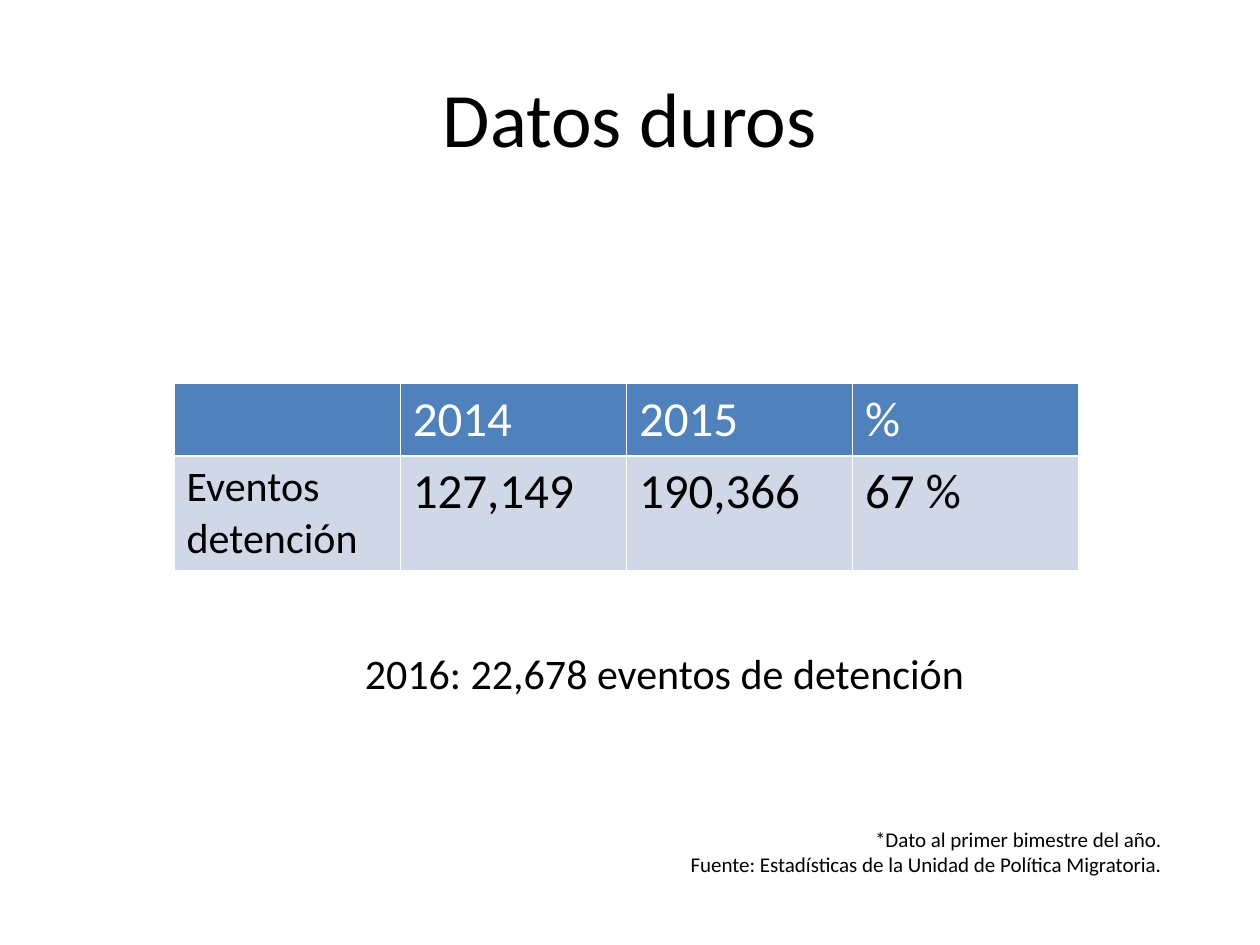
from lxml import etree
from pptx import Presentation
from pptx import util as u
from pptx.dml.color import RGBColor
from pptx.enum import text as t
from pptx.oxml import ns

BLACK = RGBColor(0, 0, 0)
WHITE = RGBColor(255, 255, 255)
BLUE = RGBColor(0x4F, 0x81, 0xBD)
PALE = RGBColor(0xD0, 0xD8, 0xE8)
FONT = "Calibri"

TITLE = "Datos duros"
ROWS = [
    ["", "2014", "2015", "%"],
    ["Eventos\ndetención", "127,149", "190,366", "67 %"],
]
STYLES = [(41, BLUE, WHITE), (65.5, PALE, BLACK)]
COL = 129.25
NOTES = [
    ("*Dato al primer bimestre del año.\n"
     "Fuente: Estadísticas de la Unidad de Política Migratoria.",
     (348.5, 468.75, 322.5, 36), 12, t.PP_ALIGN.RIGHT, True),
    ("2016: 22,678 eventos de detención",
     (201.5, 366.5, 365, 36), 24, t.PP_ALIGN.LEFT, False),
]


def write(frame, words, size=28, color=BLACK, align=t.PP_ALIGN.LEFT):
    frame.text = words
    for para in frame.paragraphs:
        para.alignment = align
        font = para.font
        font.name, font.size, font.bold = FONT, u.Pt(size), False
        font.color.rgb = color


def edge(cell, color):
    props = cell._tc.get_or_add_tcPr()
    for spot, side in enumerate(("lnL", "lnR", "lnT", "lnB")):
        line = etree.Element(ns.qn("a:" + side), w=str(u.Pt(1)))
        fill = etree.SubElement(line, ns.qn("a:solidFill"))
        etree.SubElement(fill, ns.qn("a:srgbClr"), val=str(color))
        props.insert(spot, line)


deck = Presentation()
deck.slide_width, deck.slide_height = u.Pt(720), u.Pt(540)
slide = deck.slides.add_slide(deck.slide_layouts[5])

title = slide.shapes.title
title.left, title.top, title.width, title.height = map(u.Pt, (36, 21.6, 648, 90))
title.text_frame.vertical_anchor = t.MSO_ANCHOR.MIDDLE
write(title.text_frame, TITLE, size=44, align=t.PP_ALIGN.CENTER)

high = sum(style[0] for style in STYLES)
box = map(u.Pt, (99.5, 219, COL * len(ROWS[0]), high))
table = slide.shapes.add_table(len(ROWS), len(ROWS[0]), *box).table
for col in table.columns:
    col.width = u.Pt(COL)
for row, words, (tall, fill, ink) in zip(table.rows, ROWS, STYLES):
    row.height = u.Pt(tall)
    for cell, word in zip(row.cells, words):
        write(cell.text_frame, word, size=24 if "\n" in word else 28, color=ink)
        cell.fill.solid()
        cell.fill.fore_color.rgb = fill
        edge(cell, WHITE)

for words, place, size, align, wrap in NOTES:
    frame = slide.shapes.add_textbox(*map(u.Pt, place)).text_frame
    frame.word_wrap = wrap
    frame.auto_size = t.MSO_AUTO_SIZE.SHAPE_TO_FIT_TEXT
    write(frame, words, size=size, align=align)

deck.save("out.pptx")
